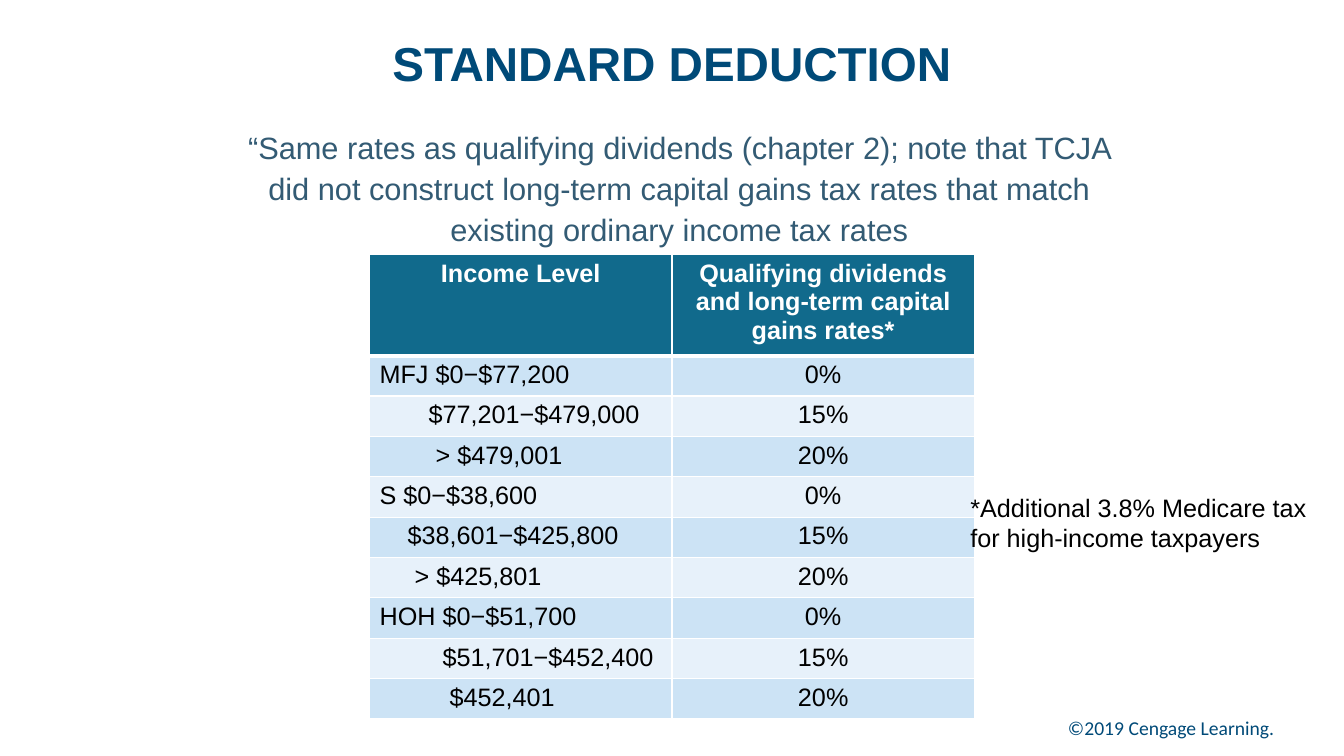
from lxml import etree
from pptx import Presentation
from pptx.dml.color import RGBColor
from pptx.enum.text import MSO_ANCHOR, PP_ALIGN
from pptx.oxml.ns import qn
from pptx.util import Pt

LEFT, CENTER, RIGHT = PP_ALIGN.LEFT, PP_ALIGN.CENTER, PP_ALIGN.RIGHT
TOP, MIDDLE, BOTTOM = MSO_ANCHOR.TOP, MSO_ANCHOR.MIDDLE, MSO_ANCHOR.BOTTOM
NAVY, SLATE, TEAL = "004A78", "335B74", "116A8C"
WHITE, BLACK = "FFFFFF", "000000"
BANDS = ("CCE3F5", "E7F1FA")
SPACE = 5  # width of one step of indent in the first column

HEADS = ("Income Level", "Qualifying dividends and long-term capital gains rates*")
RATES = ("0%", "15%", "20%")
LEVELS = (  # steps of indent, text
    (0, "MFJ $0−$77,200"), (7, "$77,201−$479,000"), (8, "> $479,001"),
    (0, "S $0−$38,600"), (4, "$38,601−$425,800"), (5, "> $425,801"),
    (0, "HOH $0−$51,700"), (9, "$51,701−$452,400"), (10, "$452,401"),
)


def color(code):
    return RGBColor.from_string(code)


def write(frame, text, size, code, align=LEFT, bold=False, font="Arial",
          indent=0, spacing=None):
    par = frame.paragraphs[0]
    par.alignment = align
    if spacing:
        par.line_spacing = spacing
    if indent:
        props = par._p.get_or_add_pPr()
        props.set("marL", str(Pt(indent)))
        props.set("indent", "0")
    run = par.add_run()
    run.text = text
    run.font.size = Pt(size)
    run.font.name = font
    run.font.bold = bold
    run.font.color.rgb = color(code)


def add_title(slide, text, left, top, width, height):
    title = slide.shapes.title
    title.left, title.top = Pt(left), Pt(top)
    title.width, title.height = Pt(width), Pt(height)
    title.text_frame.vertical_anchor = MIDDLE
    write(title.text_frame, text, 34, NAVY, CENTER, True, spacing=0.9)


def add_text(slide, text, left, top, width, height, size, code,
             anchor=TOP, **style):
    box = slide.shapes.add_textbox(Pt(left), Pt(top), Pt(width), Pt(height))
    box.text_frame.word_wrap = True
    box.text_frame.vertical_anchor = anchor
    write(box.text_frame, text, size, code, **style)


def add_edges(cell, low):
    """Draw white borders, the bottom one with its own width in points."""
    props = cell._tc.get_or_add_tcPr()
    for spot, (side, width) in enumerate(
            (("lnL", 1), ("lnR", 1), ("lnT", 1), ("lnB", low))):
        line = etree.Element(qn("a:" + side), w=str(Pt(width)))
        fill = etree.SubElement(line, qn("a:solidFill"))
        etree.SubElement(fill, qn("a:srgbClr"), val=WHITE)
        props.insert(spot, line)


def fill_cell(cell, text, back, code, low=1, **style):
    cell.fill.solid()
    cell.fill.fore_color.rgb = color(back)
    add_edges(cell, low)
    write(cell.text_frame, text, 18, code, **style)


def add_rates(slide, left, top, width, head, row):
    count = len(LEVELS)
    frame = slide.shapes.add_table(count + 1, 2, Pt(left), Pt(top), Pt(width),
                                   Pt(head + count * row))
    table = frame.table
    for line in table.rows:
        line.height = Pt(row)
    table.rows[0].height = Pt(head)
    for col, text in enumerate(HEADS):
        fill_cell(table.cell(0, col), text, TEAL, WHITE, 3,
                  align=CENTER, bold=True)
    for num, (steps, level) in enumerate(LEVELS):
        back = BANDS[num % 2]
        fill_cell(table.cell(num + 1, 0), level, back, BLACK,
                  indent=steps * SPACE)
        fill_cell(table.cell(num + 1, 1), RATES[num % 3], back, BLACK,
                  align=CENTER)


def main():
    deck = Presentation()
    deck.slide_width, deck.slide_height = Pt(960), Pt(540)
    slide = deck.slides.add_slide(deck.slide_layouts[5])
    add_text(slide, "©2019 Cengage Learning.", 227.5, 496, 690, 36, 14, NAVY,
             BOTTOM, align=RIGHT, font="Calibri")
    add_title(slide, "STANDARD DEDUCTION", 66, 11, 828, 72)
    add_text(slide, "“Same rates as qualifying dividends (chapter 2); note that "
             "TCJA did not construct long-term capital gains tax rates that "
             "match existing ordinary income tax rates",
             158.4, 86, 643.7, 88.6, 22, SLATE,
             align=CENTER, indent=10, spacing=1.1)
    add_rates(slide, 264, 182, 432, 67.4, 27.4)
    add_text(slide, "*Additional 3.8% Medicare tax for high-income taxpayers",
             686, 348, 269.3, 52, 18, BLACK)
    deck.save("out.pptx")


if __name__ == "__main__":
    main()
